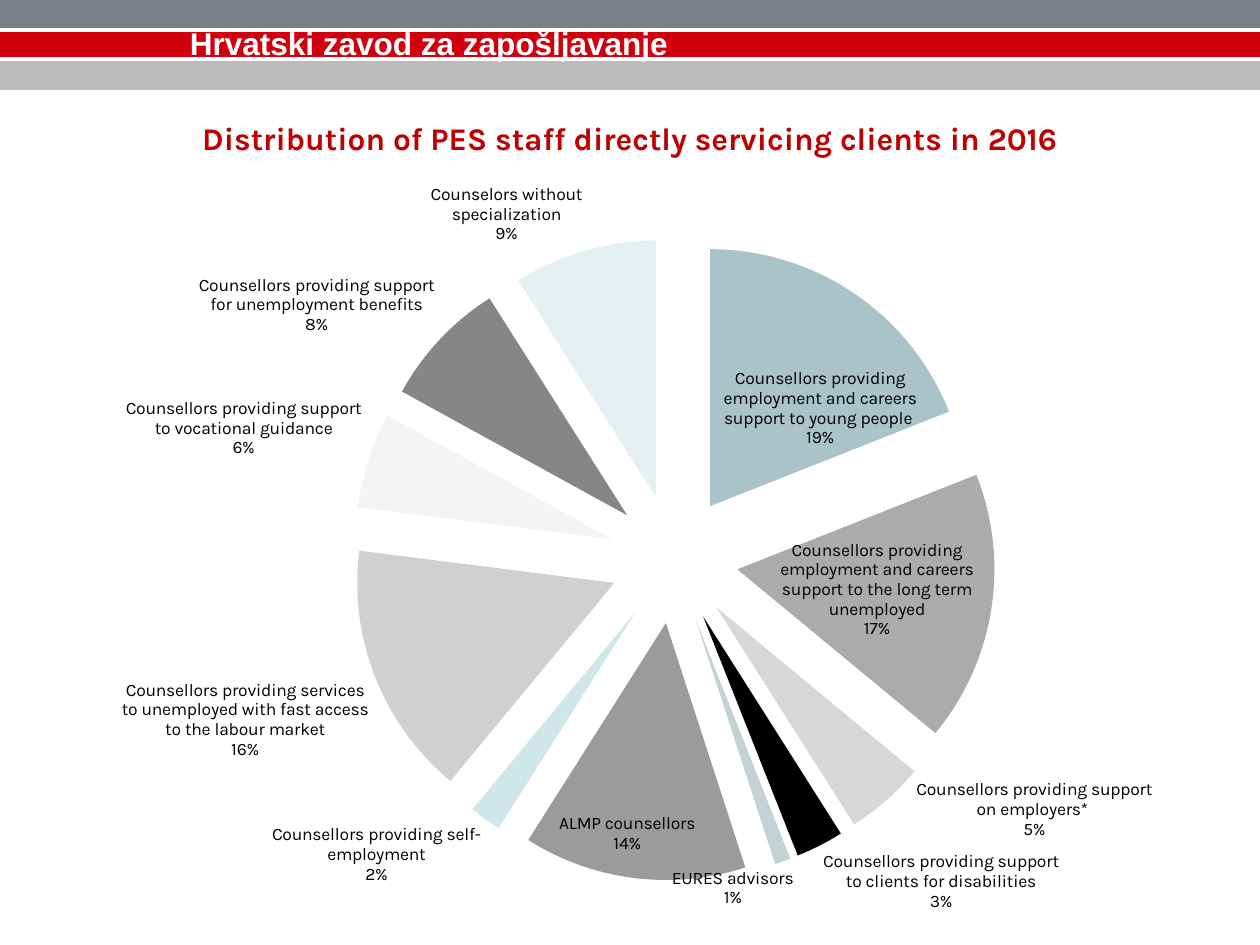
from dataclasses import dataclass

from lxml import etree
from pptx import Presentation
from pptx.chart.data import CategoryChartData
from pptx.dml.color import RGBColor
from pptx.enum.chart import XL_CHART_TYPE, XL_LABEL_POSITION
from pptx.enum.shapes import MSO_CONNECTOR, MSO_SHAPE
from pptx.oxml import parse_xml
from pptx.oxml.ns import nsdecls, qn
from pptx.util import Inches, Pt

PIE = XL_CHART_TYPE.PIE
RECTANGLE = MSO_SHAPE.RECTANGLE
STRAIGHT = MSO_CONNECTOR.STRAIGHT
OUTSIDE = XL_LABEL_POSITION.OUTSIDE_END
INSIDE = XL_LABEL_POSITION.INSIDE_END
CENTER = XL_LABEL_POSITION.CENTER
WIDTH, HEIGHT = 10, 7.5


@dataclass(frozen=True)
class Theme:
    heading_font: str = "Arial"
    chart_font: str = "Karla"
    heading_size: float = 18
    label_size: float = 10
    slate: str = "7C7F87"
    red: str = "D1000E"
    silver: str = "BCBCBC"
    white: str = "FFFFFF"
    black: str = "000000"
    title: str = "C00000"


# Category, percentage, colour, label position, label shift as shares of the chart
SLICES = [
    ("Counsellors providing employment and careers support to young people ",
     19, "A9C3C9", CENTER, (0.03, 0.01)),
    ("Counsellors providing employment and careers support to the long term unemployed",
     17, "ABABAB", CENTER, (0.01, 0)),
    ("Counsellors providing support on employers* ", 5, "D7D7D7", OUTSIDE, (0.02, -0.03)),
    ("Counsellors providing support to clients for disabilities",
     3, "000000", OUTSIDE, None),
    ("EURES advisors", 1, "C3D2D5", OUTSIDE, (-0.09, 0)),
    ("ALMP counsellors", 14, "9B9B9B", INSIDE, (-0.06, -0.02)),
    ("Counsellors providing self-employment", 2, "D0E7EA", OUTSIDE, None),
    ("Counsellors providing services to unemployed with fast access to the labour market",
     16, "D0D0D0", OUTSIDE, None),
    ("Counsellors providing support to vocational guidance", 6, "F4F4F4", OUTSIDE, None),
    ("Counsellors providing support for unemployment benefits",
     8, "868686", OUTSIDE, None),
    ("Counselors without specialization", 9, "E4F0F2", OUTSIDE, None),
]


def style_font(font, name, size, color, bold=False):
    font.name = name
    font.size = Pt(size)
    font.bold = bold
    font.color.rgb = RGBColor.from_string(color)


def write_text(frame, text, **style):
    para = frame.paragraphs[0]
    span = para.add_run()
    span.text = text
    style_font(span.font, **style)


def manual_layout(**values):
    """Return a c:layout element; values are c:manualLayout children in schema order."""
    items = "".join(f'<c:{name} val="{value}"/>' for name, value in values.items())
    return parse_xml(f'<c:layout {nsdecls("c")}><c:manualLayout>{items}'
                     "</c:manualLayout></c:layout>")


def show_name_and_percent(labels):
    """Show category and percentage on two lines for one label or a label set."""
    for name in ("LegendKey", "Val", "CatName", "SerName", "Percent", "BubbleSize"):
        flag = labels.find(qn(f"c:show{name}"))
        if flag is not None:
            flag.set("val", "1" if name in ("CatName", "Percent") else "0")
            last = flag
    separator = etree.Element(qn("c:separator"))
    separator.text = "\n"
    last.addnext(separator)


def hide_leader_lines(labels):
    for old in labels.findall(qn("c:showLeaderLines")):
        labels.remove(old)
    labels.find(qn("c:separator")).addnext(
        etree.Element(qn("c:showLeaderLines"), val="0"))


class SlideBuilder:
    def __init__(self, deck, theme):
        self.theme = theme
        self.width, self.height = deck.slide_width, deck.slide_height
        self.page = deck.slides.add_slide(deck.slide_layouts[6])

    def area(self, left, top, width, height):
        """Turn shares of the slide into lengths."""
        return (int(left * self.width), int(top * self.height),
                int(width * self.width), int(height * self.height))

    def band(self, left, top, width, height, color):
        shape = self.page.shapes.add_shape(RECTANGLE, *self.area(left, top, width, height))
        shape.shadow.inherit = False
        shape.fill.solid()
        shape.fill.fore_color.rgb = RGBColor.from_string(color)
        shape.line.color.rgb = RGBColor.from_string(color)
        shape.line.width = Pt(0.75)

    def rule(self, start, end, top):
        line = self.page.shapes.add_connector(
            STRAIGHT, *self.area(start, top, end, top))
        line.line.color.rgb = RGBColor.from_string(self.theme.white)
        line.line.width = Pt(2)
        etree.SubElement(line._element.spPr, qn("a:effectLst"))

    def text(self, left, top, width, height, words, **style):
        box = self.page.shapes.add_textbox(*self.area(left, top, width, height))
        box.text_frame.word_wrap = True
        write_text(box.text_frame, words, **style)

    def pie(self, left, top, width, height, title, slices):
        theme = self.theme
        data = CategoryChartData()
        data.categories = [entry[0] for entry in slices]
        data.add_series("Series 1", [entry[1] for entry in slices])
        chart = self.page.shapes.add_chart(
            PIE, *self.area(left, top, width, height), data).chart
        style_font(chart.font, theme.chart_font, theme.label_size, theme.black)
        chart.has_legend = False
        chart.has_title = True
        write_text(chart.chart_title.text_frame, title, name=theme.chart_font,
                   size=theme.heading_size, color=theme.title, bold=True)
        chart.plots[0].vary_by_categories = True
        self.format_slices(chart.plots[0].series[0], slices)
        plot_area = chart._chartSpace.chart.plotArea
        for old in plot_area.findall(qn("c:layout")):
            plot_area.remove(old)
        plot_area.insert(0, manual_layout(
            layoutTarget="inner", xMode="edge", yMode="edge",
            x=0.28, y=0.17, w=0.51, h=0.76))

    def format_slices(self, series, slices):
        labels = series.data_labels
        labels.show_percentage = True
        labels.number_format = "0%"
        labels.number_format_is_linked = False
        show_name_and_percent(labels._element)
        hide_leader_lines(labels._element)
        for index, (_, _, color, position, shift) in enumerate(slices):
            point = series.points[index]
            point.format.fill.solid()
            point.format.fill.fore_color.rgb = RGBColor.from_string(color)
            point.format.line.fill.background()
            point.data_label.position = position
            label = labels._element.findall(qn("c:dLbl"))[-1]
            show_name_and_percent(label)
            if shift:
                label.find(qn("c:idx")).addnext(manual_layout(x=shift[0], y=shift[1]))
        explosion = etree.Element(qn("c:explosion"), val="25")
        series._element.find(qn("c:dPt")).addprevious(explosion)


def main():
    deck = Presentation()
    deck.slide_width, deck.slide_height = Inches(WIDTH), Inches(HEIGHT)
    theme = Theme()
    slide = SlideBuilder(deck, theme)
    pitch, thickness = 0.24 / HEIGHT, 0.23 / HEIGHT
    for row, color in enumerate((theme.slate, theme.red, theme.silver)):
        slide.band(0, row * pitch, 1, thickness, color)
    for top in (pitch, pitch + thickness):
        slide.rule(0, 1, top)
    slide.text(1.41 / WIDTH, 0.14 / HEIGHT, 0.72, 0.4 / HEIGHT,
               "Hrvatski zavod za zapošljavanje", name=theme.heading_font,
               size=theme.heading_size, color=theme.white, bold=True)
    chart_top = 0.7 / HEIGHT
    slide.pie(0, chart_top, 1, 1 - chart_top,
              "Distribution of PES staff directly servicing clients in 2016", SLICES)
    deck.save("out.pptx")


if __name__ == "__main__":
    main()
